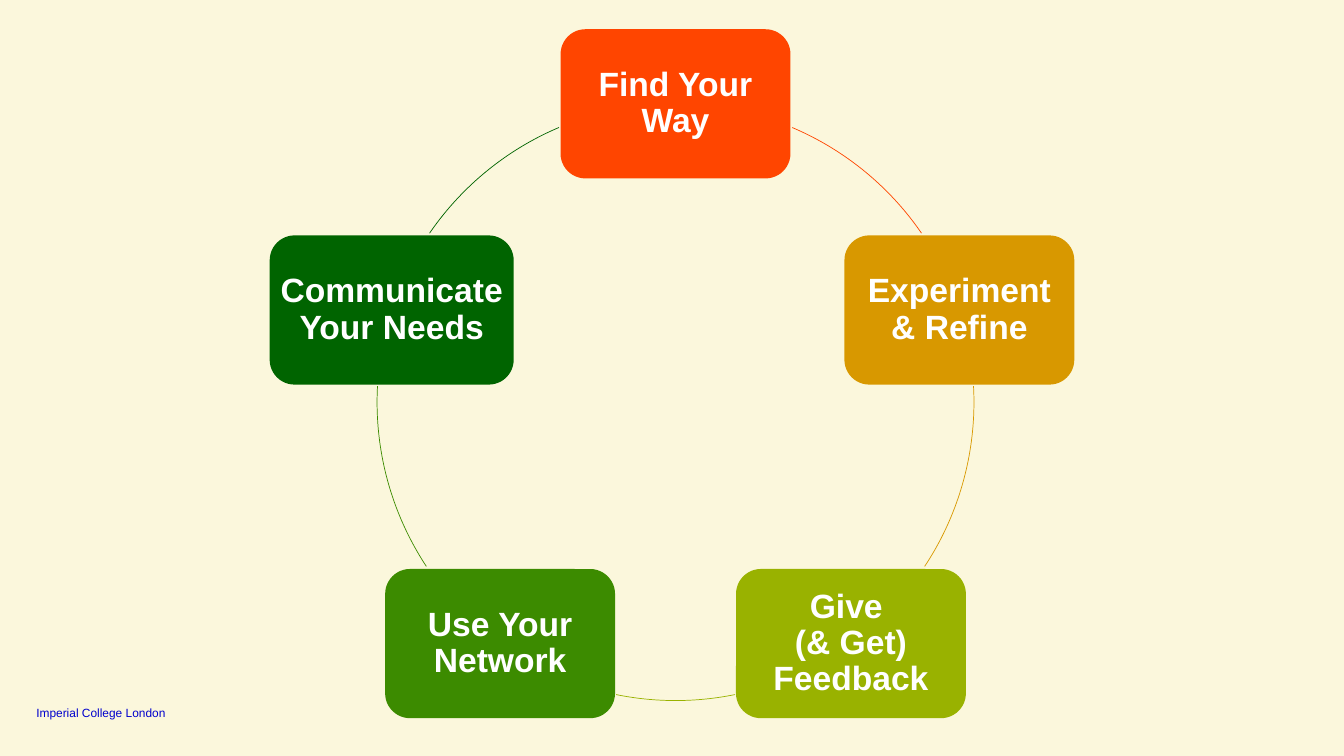
from math import cos, radians, sin

from pptx import Presentation
from pptx.dml.color import RGBColor
from pptx.enum.shapes import MSO_SHAPE as Shape
from pptx.enum.text import MSO_ANCHOR as Anchor, PP_ALIGN as Align
from pptx.util import Inches, Pt

CENTER_X, CENTER_Y, RADIUS = 6.7, 3.99, 2.96
BOX_WIDTH, BOX_HEIGHT = 2.28, 1.48

STEPS = [
    (["Find Your Way"], "FF4500", 293, 325.5, {}),
    (["Experiment & Refine"], "D89800", 356.9, 33.4, {}),
    (["Give ", "(& Get) Feedback"], "99B200", 78.5, 101.5, {}),
    (["Use Your Network"], "3C8B00", 146.6, 183.1, {}),
    (["Communicate Your Needs"], "006400", 214.5, 247, {"width": 2.42, "side_inset": 0}),
]


def color(hex_string):
    return RGBColor.from_string(hex_string)


def write_text(shape, lines, size, font_color, bold=False, align=Align.LEFT,
               anchor=Anchor.MIDDLE, spacing=1.0, side_inset=0, end_inset=0):
    frame = shape.text_frame
    frame.word_wrap = True
    frame.vertical_anchor = anchor
    frame.margin_left = frame.margin_right = Inches(side_inset)
    frame.margin_top = frame.margin_bottom = Inches(end_inset)
    frame.text = "\n".join(lines)
    for paragraph in frame.paragraphs:
        paragraph.alignment = align
        paragraph.line_spacing = spacing
        for run in paragraph.runs:
            run.font.name = "Arial"
            run.font.size = Pt(size)
            run.font.bold = bold
            run.font.color.rgb = color(font_color)


def add_arc(slide, start, end, line_color):
    shape = slide.shapes.add_shape(
        Shape.ARC, Inches(CENTER_X - RADIUS), Inches(CENTER_Y - RADIUS),
        Inches(2 * RADIUS), Inches(2 * RADIUS))
    shape.adjustments[0] = start * 0.6
    shape.adjustments[1] = end * 0.6
    shape.shadow.inherit = False
    shape.fill.background()
    shape.line.color.rgb = color(line_color)
    shape.line.width = Pt(0.5)


def add_step(slide, angle, lines, fill, width=BOX_WIDTH, side_inset=0.1):
    x = CENTER_X + RADIUS * cos(radians(angle))
    y = CENTER_Y + RADIUS * sin(radians(angle))
    shape = slide.shapes.add_shape(
        Shape.ROUNDED_RECTANGLE, Inches(x - width / 2),
        Inches(y - BOX_HEIGHT / 2), Inches(width), Inches(BOX_HEIGHT))
    shape.shadow.inherit = False
    shape.fill.solid()
    shape.fill.fore_color.rgb = color(fill)
    shape.line.fill.background()
    write_text(shape, lines, 24, "FFFFFF", bold=True, align=Align.CENTER,
               spacing=0.9, side_inset=side_inset, end_inset=0.1)


def add_footer(slide, text):
    box = slide.shapes.add_textbox(
        Inches(0.36), Inches(6.99), Inches(1.55), Inches(0.15))
    write_text(box, [text], 8.5, "0000CD", anchor=Anchor.BOTTOM)


def main():
    presentation = Presentation()
    presentation.slide_width = Inches(13.33)
    presentation.slide_height = Inches(7.5)
    slide = presentation.slides.add_slide(presentation.slide_layouts[6])
    slide.background.fill.solid()
    slide.background.fill.fore_color.rgb = color("FBF7DC")
    add_footer(slide, "Imperial College London")
    for index, (lines, fill, start, end, options) in enumerate(STEPS):
        add_step(slide, -90 + index * 360 / len(STEPS), lines, fill, **options)
        add_arc(slide, start, end, fill)
    presentation.save("out.pptx")


if __name__ == "__main__":
    main()
